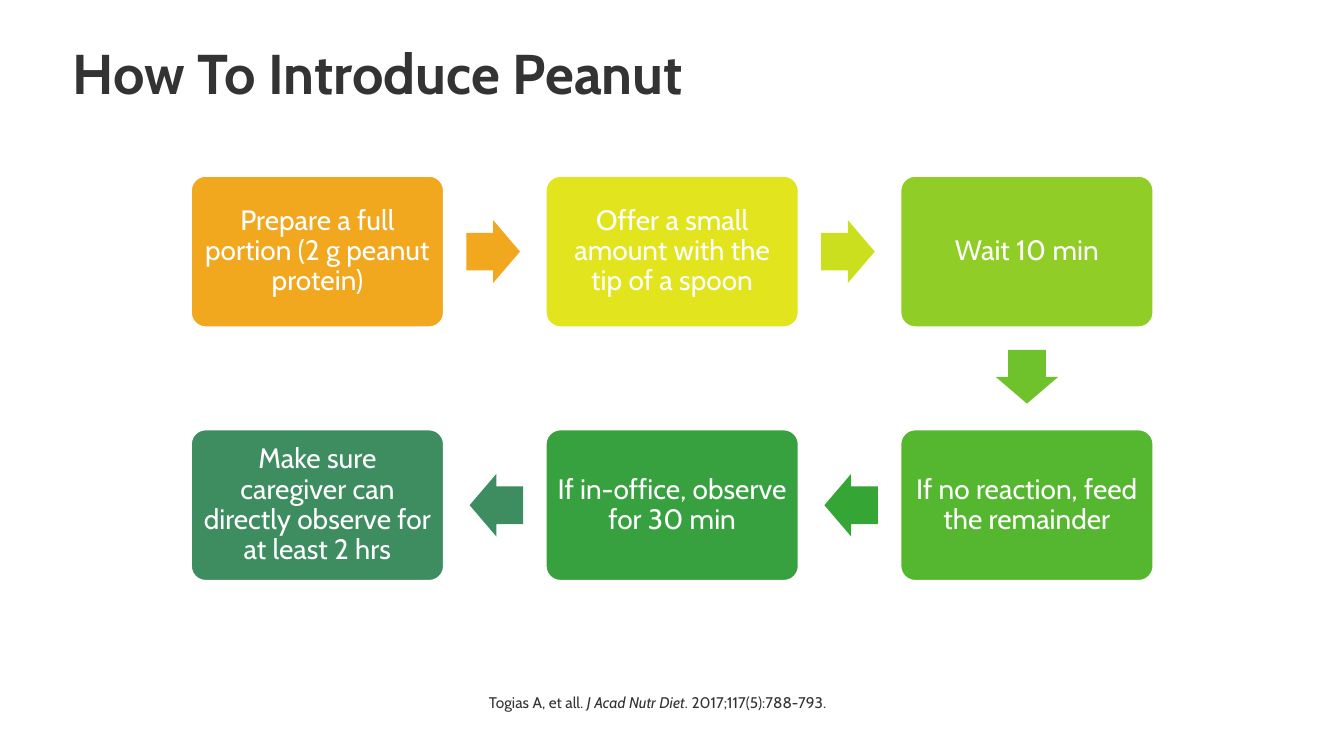
from dataclasses import dataclass

from pptx import Presentation
from pptx.dml.color import RGBColor
from pptx.enum.shapes import MSO_SHAPE
from pptx.enum.text import MSO_ANCHOR, MSO_AUTO_SIZE, PP_ALIGN
from pptx.util import Cm, Pt

ROUNDED = MSO_SHAPE.ROUNDED_RECTANGLE
ARROW = MSO_SHAPE.RIGHT_ARROW
LEFT, CENTER = PP_ALIGN.LEFT, PP_ALIGN.CENTER
TOP, MIDDLE = MSO_ANCHOR.TOP, MSO_ANCHOR.MIDDLE
NO_AUTOFIT = MSO_AUTO_SIZE.NONE


@dataclass(frozen=True)
class Theme:
    font: str = "Cabin"
    ink: str = "333333"
    white: str = "FFFFFF"
    title_size: int = 40
    step_size: int = 20
    citation_size: int = 11
    line_spacing: float = 0.9


THEME = Theme()

STEPS = [
    ("Prepare a full portion (2 g peanut protein)", "F1A71E"),
    ("Offer a small amount with the tip of a spoon", "E2E41D"),
    ("Wait 10 min", "90CD26"),
    ("If no reaction, feed the remainder", "54B72F"),
    ("If in-office, observe for 30 min", "37A140"),
    ("Make sure caregiver can directly observe for at least 2 hrs", "3D8D61"),
]
ARROW_COLORS = ["F1A71E", "CCDF1E", "6FC22B", "35A635", "3D8D61"]
COLUMNS = 3
CARD_WIDTH, CARD_HEIGHT = 6.4, 3.84
ARROW_LENGTH, ARROW_BREADTH = 1.35, 1.58
ARROW_SETBACK = 0.04


def add_run(paragraph, text, size, color, bold=False, italic=False):
    run = paragraph.add_run()
    run.text = text
    run.font.name = THEME.font
    run.font.size = Pt(size)
    run.font.bold = bold
    run.font.italic = italic
    run.font.color.rgb = RGBColor.from_string(color)


def prepare_text(shape, anchor, alignment):
    frame = shape.text_frame
    frame.word_wrap = True
    frame.auto_size = NO_AUTOFIT
    frame.vertical_anchor = anchor
    paragraph = frame.paragraphs[0]
    paragraph.alignment = alignment
    return paragraph


def add_filled_shape(slide, kind, box, color):
    shape = slide.shapes.add_shape(kind, *(Cm(length) for length in box))
    shape.shadow.inherit = False
    shape.fill.solid()
    shape.fill.fore_color.rgb = RGBColor.from_string(color)
    shape.line.fill.background()
    return shape


def add_title(slide, box):
    title = slide.shapes.title
    title.left, title.top, title.width, title.height = (Cm(length) for length in box)
    paragraph = prepare_text(title, TOP, LEFT)
    paragraph.line_spacing = THEME.line_spacing
    add_run(paragraph, "How To Introduce Peanut", THEME.title_size, THEME.ink, bold=True)


def add_step(slide, box, text, color):
    card = add_filled_shape(slide, ROUNDED, box, color)
    card.adjustments[0] = 0.1
    card.line.color.rgb = RGBColor.from_string(THEME.white)
    card.line.width = Pt(2)
    paragraph = prepare_text(card, MIDDLE, CENTER)
    frame = card.text_frame
    frame.margin_left = frame.margin_right = Cm(0.2)
    frame.margin_top = frame.margin_bottom = Cm(0.2)
    paragraph.line_spacing = THEME.line_spacing
    add_run(paragraph, text, THEME.step_size, THEME.white)


def add_step_arrow(slide, start, end, color):
    across = (end[0] > start[0]) - (end[0] < start[0])
    down = int(end[1] > start[1])
    center_x = (start[0] + end[0] + CARD_WIDTH) / 2 - across * ARROW_SETBACK
    center_y = (start[1] + end[1] + CARD_HEIGHT) / 2 - down * ARROW_SETBACK
    box = (center_x - ARROW_LENGTH / 2, center_y - ARROW_BREADTH / 2,
           ARROW_LENGTH, ARROW_BREADTH)
    arrow = add_filled_shape(slide, ARROW, box, color)
    arrow.adjustments[0], arrow.adjustments[1] = 0.6, 0.5
    arrow.rotation = 90 if down else 180 if across < 0 else 0


def add_process(slide, box):
    left, top, width, height = box
    column_pitch = (width - CARD_WIDTH) / (COLUMNS - 1)
    row_pitch = height - CARD_HEIGHT
    corners = []
    for index, (text, color) in enumerate(STEPS):
        row, column = divmod(index, COLUMNS)
        if row % 2:
            column = COLUMNS - 1 - column
        corner = (left + column * column_pitch, top + row * row_pitch)
        corners.append(corner)
        add_step(slide, (*corner, CARD_WIDTH, CARD_HEIGHT), text, color)
    for start, end, color in zip(corners, corners[1:], ARROW_COLORS):
        add_step_arrow(slide, start, end, color)


def add_citation(slide, box):
    citation = slide.shapes.add_textbox(*(Cm(length) for length in box))
    paragraph = prepare_text(citation, TOP, LEFT)
    for text, italic in [("Togias A, et all. ", False),
                         ("J Acad Nutr Diet", True),
                         (". 2017;117(5):788-793.", False)]:
        add_run(paragraph, text, THEME.citation_size, THEME.ink, italic=italic)


def main():
    presentation = Presentation()
    presentation.slide_width = Cm(33.87)
    presentation.slide_height = Cm(19.05)
    slide = presentation.slides.add_slide(presentation.slide_layouts[5])
    add_title(slide, (1.58, 1.04, 31.42, 1.58))
    add_process(slide, (4.8, 4.42, 24.28, 10.23))
    add_citation(slide, (12.07, 17.35, 9.73, 1.27))
    presentation.save("out.pptx")


if __name__ == "__main__":
    main()
